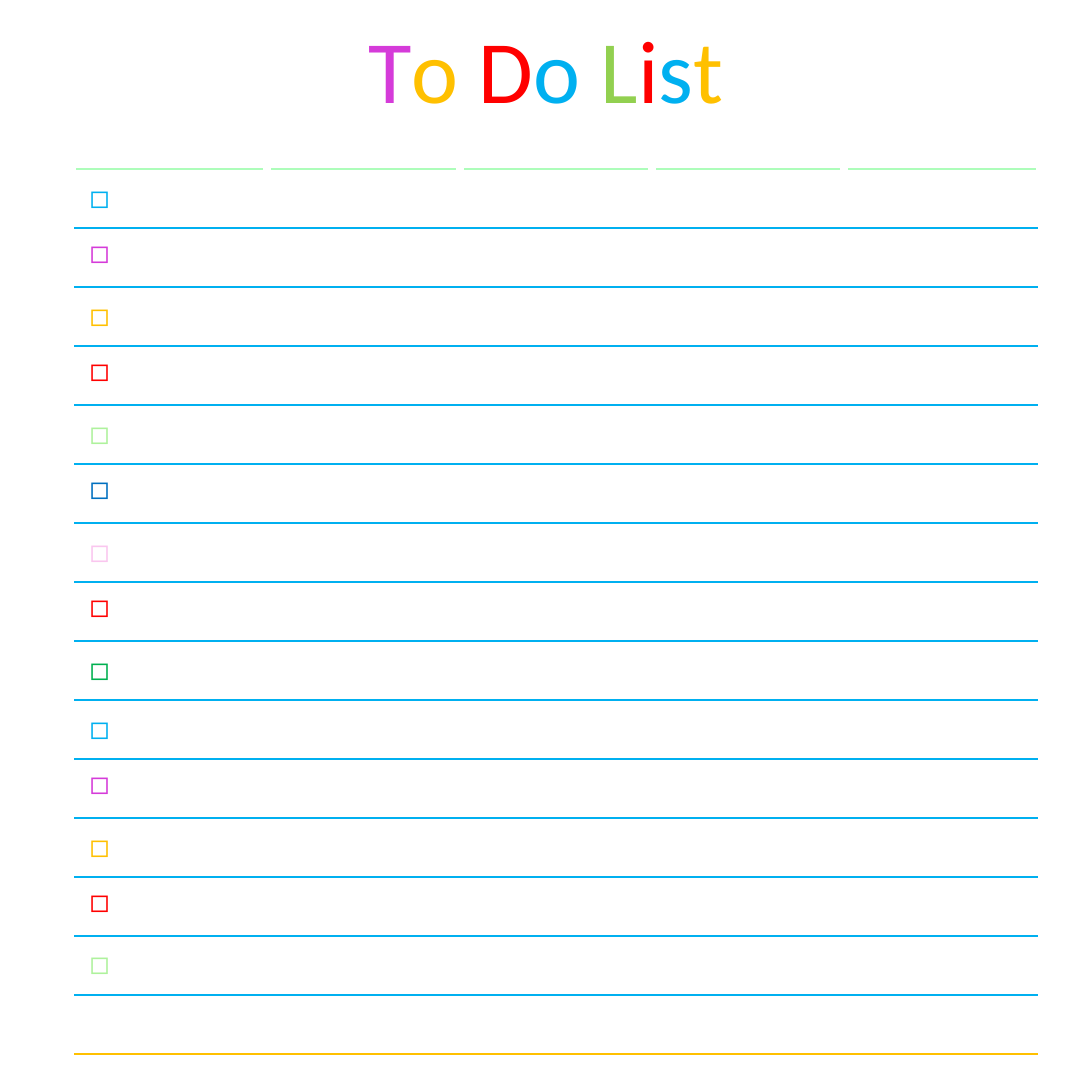
from lxml.etree import SubElement, Element
from pptx import Presentation
from pptx.dml.color import RGBColor
from pptx.enum.text import MSO_ANCHOR as Anchor, PP_ALIGN as Align
from pptx.oxml.ns import qn
from pptx.util import Pt

EMU_PER_PX = 914400 / 145.6
SIDE = 1092
ROWS, COLUMNS = 15, 5

PURPLE, GOLD, RED, BLUE = "D53BD9", "FFC000", "FF0000", "00B0F0"
LIME, MINT, PALE_MINT, WHITE = "92D050", "AEF29C", "ADFDBA", "FFFFFF"
NAVY, PINK, GREEN = "0070C0", "FAC6EF", "00B050"

TITLE = [("T", PURPLE), ("o ", GOLD), ("D", RED), ("o", BLUE),
         (" L", LIME), ("i", RED), ("s", BLUE), ("t", GOLD)]
CHECKBOXES = [BLUE, PURPLE, GOLD, RED, MINT, NAVY, PINK, RED,
              GREEN, BLUE, PURPLE, GOLD, RED, MINT]
TOP_ANCHORED = {PURPLE, RED, NAVY}

TITLE_FONT = {"name": "Calibri", "size": Pt(44)}
CHECKBOX_FONT = {"name": "Karla", "size": Pt(16)}


def px(length):
    """Turn whole px into EMU."""
    return round(length * EMU_PER_PX)


def color(value):
    """Turn a hex string into a colour."""
    return RGBColor.from_string(value)


def apply(target, values):
    """Set every attribute named in a dict of format values."""
    for name, value in values.items():
        setattr(target, name, value)


class Planner:
    """Hold the deck style and the current slide."""

    def __init__(self, deck):
        """Add a white slide that has only a title."""
        self.slide = deck.slides.add_slide(deck.slide_layouts[5])
        fill = self.slide.background.fill
        fill.solid()
        fill.fore_color.rgb = color(WHITE)

    def span(self, para, text, hue, font):
        """Add a coloured run to a paragraph."""
        span = para.add_run()
        span.text = text
        apply(span.font, font)
        span.font.color.rgb = color(hue)

    def title(self, left, top, width, height, spans):
        """Place and fill the title placeholder."""
        box = self.slide.shapes.title
        apply(box, {"left": px(left), "top": px(top),
                    "width": px(width), "height": px(height)})
        apply(box.text_frame, {"vertical_anchor": Anchor.MIDDLE, "word_wrap": True})
        para = box.text_frame.paragraphs[0]
        apply(para, {"alignment": Align.CENTER, "line_spacing": 0.9})
        for text, hue in spans:
            self.span(para, text, hue, TITLE_FONT)

    def table(self, left, top, width, height):
        """Add an unfilled table with equal rows and columns."""
        frame = self.slide.shapes.add_table(
            ROWS, COLUMNS, px(left), px(top), px(width), px(height))
        apply(frame.table, {"first_row": False, "horz_banding": False})
        return frame.table

    def borders(self, cell, edges):
        """Draw the given edges, listed in left, right, top, bottom order."""
        properties = cell._tc.get_or_add_tcPr()
        for position, (side, hue, points) in enumerate(edges):
            line = Element(qn(f"a:ln{side}"), w=str(Pt(points)))
            fill = SubElement(line, qn("a:solidFill"))
            SubElement(fill, qn("a:srgbClr"), val=hue)
            properties.insert(position, line)

    def checkbox(self, cell, hue):
        """Put a coloured checkbox in a cell."""
        cell.vertical_anchor = Anchor.TOP if hue in TOP_ANCHORED else Anchor.MIDDLE
        self.span(cell.text_frame.paragraphs[0], "◻", hue, CHECKBOX_FONT)

    def checklist(self, left, top, width, height):
        """Add the ruled list with one checkbox per task row."""
        table = self.table(left, top, width, height)
        for row in range(ROWS):
            for column in range(COLUMNS):
                cell = table.cell(row, column)
                cell.fill.background()
                edges = [("L", WHITE, 4.5)] if column > 0 else []
                if column < COLUMNS - 1:
                    edges.append(("R", WHITE, 4.5))
                edges.append(("T", PALE_MINT if row == 0 else BLUE, 1))
                edges.append(("B", GOLD if row == ROWS - 1 else BLUE, 1))
                self.borders(cell, edges)
                if column == 0 and row < len(CHECKBOXES):
                    self.checkbox(cell, CHECKBOXES[row])
                else:
                    apply(cell, {"margin_top": 0, "margin_bottom": 0})


def main():
    """Build and save the to-do list."""
    deck = Presentation()
    apply(deck, {"slide_width": px(SIDE), "slide_height": px(SIDE)})
    planner = Planner(deck)
    planner.title(75, 26, 942, 98, TITLE)
    planner.checklist(75, 169, 962, 885)
    deck.save("out.pptx")


if __name__ == "__main__":
    main()
